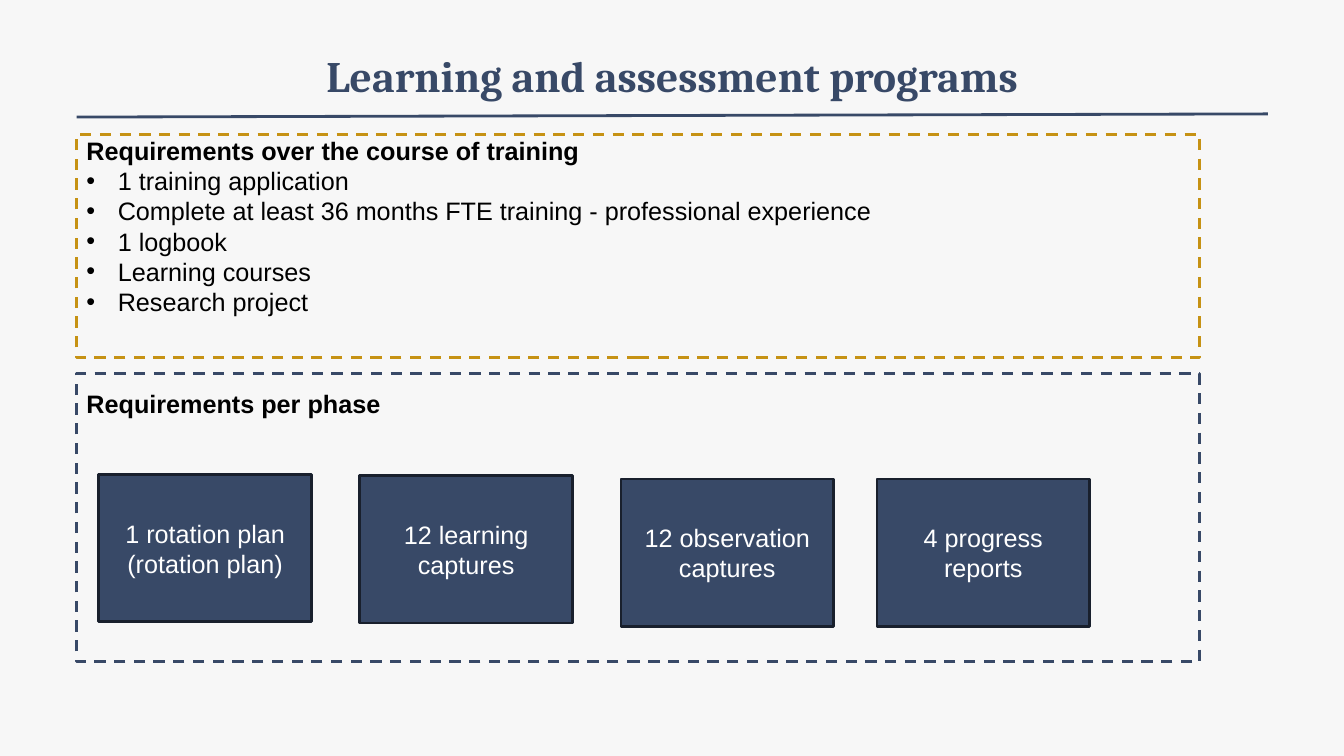
import dataclasses

import lxml.etree
import pptx
import pptx.dml.color
import pptx.enum.dml
import pptx.enum.shapes
import pptx.enum.text
import pptx.oxml.ns
import pptx.util

Cm, Pt = pptx.util.Cm, pptx.util.Pt
qn = pptx.oxml.ns.qn
Align = pptx.enum.text.PP_ALIGN
Anchor = pptx.enum.text.MSO_ANCHOR


@dataclasses.dataclass(frozen=True)
class Theme:
    paper: str = "F7F7F7"
    navy: str = "384967"
    dark: str = "19202D"
    gold: str = "C69214"
    black: str = "000000"
    white: str = "FFFFFF"
    title_font: str = "Cambria"
    body_font: str = "Arial"
    title_size: float = 31
    body_size: float = 18
    line_width: float = 2


THEME = Theme()

PROGRAM_REQUIREMENTS = [
    "1 training application",
    "Complete at least 36 months FTE training - professional experience",
    "1 logbook",
    "Learning courses",
    "Research project",
]

# Left, top and wording of each phase tile
PHASE_TILES = [
    (2.49, 11.96, "1 rotation plan (rotation plan)"),
    (9.07, 11.99, "12 learning captures"),
    (15.65, 12.07, "12 observation captures"),
    (22.1, 12.07, "4 progress reports"),
]


def rgb(value):
    return pptx.dml.color.RGBColor.from_string(value)


def apply_format(target, values):
    for name, value in values.items():
        setattr(target, name, value)


def style_line(line, color):
    line.color.rgb = rgb(color)
    line.width = Pt(THEME.line_width)


def write(paragraph, text, color, **formats):
    paragraph.text = text
    base = {"name": THEME.body_font, "size": Pt(THEME.body_size), "bold": False}
    apply_format(paragraph.font, {**base, **formats})
    paragraph.font.color.rgb = rgb(color)


def add_bullet(paragraph):
    props = paragraph._p.get_or_add_pPr()
    props.set("marL", str(Cm(0.79)))
    props.set("indent", str(Cm(-0.79)))
    lxml.etree.SubElement(props, qn("a:buFont")).set("typeface", "Arial")
    lxml.etree.SubElement(props, qn("a:buChar")).set("char", "•")


def add_text_frame(slide, left, top, width, height, **formats):
    frame = slide.shapes.add_textbox(Cm(left), Cm(top), Cm(width), Cm(height)).text_frame
    apply_format(frame, {"word_wrap": True, **formats})
    return frame


def add_rectangle(slide, left, top, width, height, outline):
    rectangle = slide.shapes.add_shape(
        pptx.enum.shapes.MSO_SHAPE.RECTANGLE, Cm(left), Cm(top), Cm(width), Cm(height))
    rectangle.shadow.inherit = False
    style_line(rectangle.line, outline)
    return rectangle


def add_dashed_panel(slide, top, height, outline):
    panel = add_rectangle(slide, 1.93, top, 28.3, height, outline)
    panel.fill.background()
    panel.line.dash_style = pptx.enum.dml.MSO_LINE.DASH


def add_phase_tile(slide, left, top, label):
    tile = add_rectangle(slide, left, top, 5.36, 3.71, THEME.dark)
    tile.fill.solid()
    tile.fill.fore_color.rgb = rgb(THEME.navy)
    apply_format(tile.text_frame, {"word_wrap": True, "vertical_anchor": Anchor.MIDDLE})
    paragraph = tile.text_frame.paragraphs[0]
    write(paragraph, label, THEME.white)
    paragraph.alignment = Align.CENTER


def add_title(slide, text):
    frame = add_text_frame(
        slide, 4.22, 0.74, 25.43, 2.31, vertical_anchor=Anchor.MIDDLE,
        margin_left=Cm(0.18), margin_right=Cm(0.18),
        margin_top=Cm(0.1), margin_bottom=Cm(0.1))
    heading = frame.paragraphs[0]
    write(heading, text, THEME.navy, name=THEME.title_font,
          size=Pt(THEME.title_size), bold=True)
    heading.alignment = Align.CENTER


def add_title_rule(slide):
    rule = slide.shapes.add_connector(
        pptx.enum.shapes.MSO_CONNECTOR.STRAIGHT, Cm(1.93), Cm(2.95), Cm(31.95), Cm(2.87))
    style_line(rule.line, THEME.navy)
    lxml.etree.SubElement(rule._element.spPr, qn("a:effectLst"))


def add_requirements(slide, top, width, height, heading, items=()):
    frame = add_text_frame(slide, 1.93, top, width, height)
    write(frame.paragraphs[0], heading, THEME.black, bold=True)
    for item in items:
        paragraph = frame.add_paragraph()
        add_bullet(paragraph)
        write(paragraph, item, THEME.black)


def main():
    deck = pptx.Presentation()
    deck.slide_width, deck.slide_height = Cm(33.87), Cm(19.05)
    slide = deck.slides.add_slide(deck.slide_layouts[6])
    slide.background.fill.solid()
    slide.background.fill.fore_color.rgb = rgb(THEME.paper)

    # Heading
    add_title(slide, "Learning and assessment programs")
    add_title_rule(slide)

    # Whole training
    add_dashed_panel(slide, 3.38, 5.64, THEME.gold)
    add_requirements(slide, 3.28, 25, 4.88,
                     "Requirements over the course of training", PROGRAM_REQUIREMENTS)

    # Each phase
    add_dashed_panel(slide, 9.42, 7.26, THEME.navy)
    add_requirements(slide, 9.65, 16.94, 1.02, "Requirements per phase")
    for left, top, label in PHASE_TILES:
        add_phase_tile(slide, left, top, label)

    deck.save("out.pptx")


if __name__ == "__main__":
    main()
